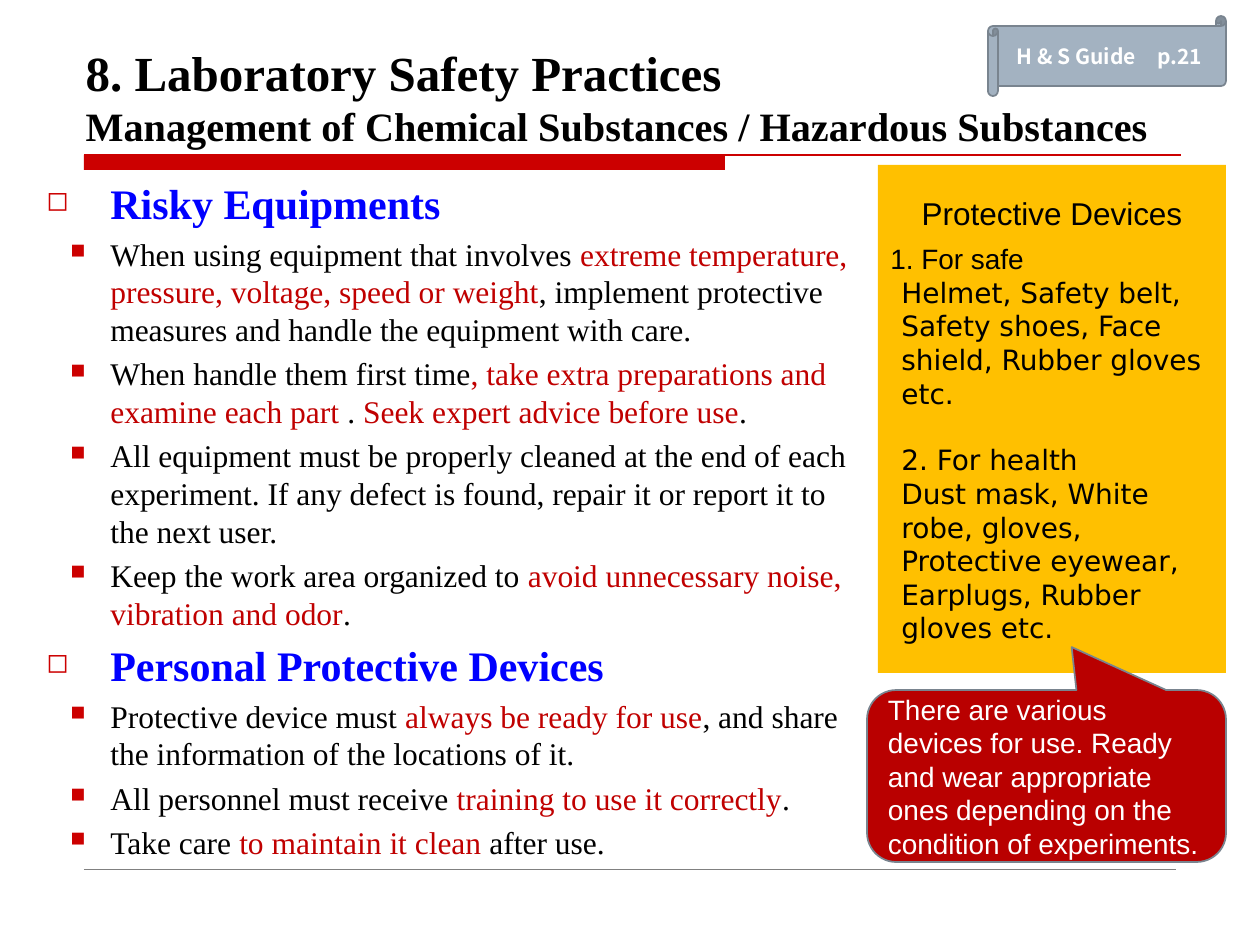
from dataclasses import dataclass

from lxml import etree
from pptx import Presentation
from pptx.dml.color import RGBColor
from pptx.enum.shapes import MSO_CONNECTOR, MSO_SHAPE
from pptx.enum.text import MSO_ANCHOR, MSO_AUTO_SIZE, PP_ALIGN
from pptx.oxml.ns import qn
from pptx.util import Emu, Pt

PX_PER_INCH = 126
LEFT, CENTER = PP_ALIGN.LEFT, PP_ALIGN.CENTER
TOP, MIDDLE, BOTTOM = MSO_ANCHOR.TOP, MSO_ANCHOR.MIDDLE, MSO_ANCHOR.BOTTOM
RECTANGLE = MSO_SHAPE.RECTANGLE
SCROLL = MSO_SHAPE.HORIZONTAL_SCROLL
CALLOUT = MSO_SHAPE.ROUNDED_RECTANGULAR_CALLOUT
STRAIGHT = MSO_CONNECTOR.STRAIGHT


@dataclass(frozen=True)
class Theme:
    serif: str = "Times New Roman"
    sans: str = "Arial"
    list_sans: str = "DejaVu Sans"
    label_font: str = "Noto Sans CJK JP"
    black: str = "000000"
    white: str = "FFFFFF"
    red: str = "CC0000"
    emphasis: str = "C00000"
    heading: str = "0000FF"
    scroll: str = "A3B2C1"
    outline: str = "79848F"
    footer: str = "808080"
    panel: str = "FFC000"
    callout: str = "B90000"
    title_size: int = 28
    subtitle_size: int = 23
    heading_size: int = 24
    body_size: int = 18
    panel_size: int = 16
    label_size: int = 12


THEME = Theme()


@dataclass(frozen=True)
class Box:
    left: int
    top: int
    width: int
    height: int

    def emu(self) -> tuple:
        return tuple(map(px, (self.left, self.top, self.width, self.height)))


@dataclass(frozen=True)
class Span:
    text: str
    emphasised: bool = False


@dataclass(frozen=True)
class Section:
    heading: str
    items: tuple


@dataclass(frozen=True)
class Bullet:
    symbol: str
    hanging: int


HEADING_BULLET = Bullet("◻", 64)
ITEM_BULLET = Bullet("■", 40)
BODY_INDENT = 64

SECTIONS = (
    Section("Risky Equipments", (
        (Span("When using equipment that involves "),
         Span("extreme temperature, pressure, voltage, speed or weight", True),
         Span(", implement protective measures and handle the equipment with care.")),
        (Span("When handle them first time"),
         Span(", take extra preparations and examine each part ", True),
         Span(". "), Span("Seek expert advice before use", True), Span(".")),
        (Span("All equipment must be properly cleaned at the end of each experiment. "
              "If any defect is found, repair it or report it to the next user."),),
        (Span("Keep the work area organized to "),
         Span("avoid unnecessary noise, vibration and odor", True), Span(".")),
    )),
    Section("Personal Protective Devices", (
        (Span("Protective device must "), Span("always be ready for use", True),
         Span(", and share the information of the locations of it.")),
        (Span("All personnel must receive "),
         Span("training to use it correctly", True), Span(".")),
        (Span("Take care "), Span("to maintain it clean ", True), Span("after use.")),
    )),
)


def px(length: int) -> Emu:
    return Emu(round(length * 914400 / PX_PER_INCH))


def add_span(para, text: str, *, size: int, font: str, color: str = THEME.black,
             bold: bool = False) -> None:
    run = para.add_run()
    run.text = text
    run.font.size = Pt(size)
    run.font.name = font
    run.font.bold = bold
    run.font.color.rgb = RGBColor.from_string(color)
    east_asian = etree.SubElement(run.font._element, qn("a:ea"))
    east_asian.set("typeface", font)


def next_para(frame, *, align=LEFT, before: float = 0, after: float = 0, indent: int = 0):
    """Return the frame's unused first paragraph, or a new one."""
    first = frame.paragraphs[0]
    para = frame.add_paragraph() if first.runs else first
    para.alignment = align
    para.space_before, para.space_after = Pt(before), Pt(after)
    if indent:
        para._p.get_or_add_pPr().set("marL", str(px(indent)))
    return para


def add_bullet(para, bullet: Bullet) -> None:
    properties = para._p.get_or_add_pPr()
    properties.set("indent", str(-px(bullet.hanging)))
    color = etree.SubElement(properties, qn("a:buClr"))
    etree.SubElement(color, qn("a:srgbClr")).set("val", THEME.red)
    etree.SubElement(properties, qn("a:buSzPct")).set("val", "65000")
    etree.SubElement(properties, qn("a:buChar")).set("char", bullet.symbol)


def set_frame(frame, anchor) -> None:
    frame.word_wrap = True
    frame.auto_size = MSO_AUTO_SIZE.NONE
    frame.vertical_anchor = anchor


def add_panel(page, preset, box: Box, fill: str, outline: str = ""):
    shape = page.shapes.add_shape(preset, *box.emu())
    shape.shadow.inherit = False
    shape.fill.solid()
    shape.fill.fore_color.rgb = RGBColor.from_string(fill)
    if outline:
        shape.line.color.rgb = RGBColor.from_string(outline)
        shape.line.width = Pt(1)
    else:
        shape.line.fill.background()
    set_frame(shape.text_frame, MIDDLE)
    return shape


def add_rule(page, left: int, right: int, y: int, color: str, width: float) -> None:
    rule = page.shapes.add_connector(STRAIGHT, px(left), px(y), px(right), px(y))
    rule.line.color.rgb = RGBColor.from_string(color)
    rule.line.width = Pt(width)
    etree.SubElement(rule._element.spPr, qn("a:effectLst"))


def write_title(page) -> None:
    title = page.shapes.title
    title.left, title.top, title.width, title.height = Box(73, 53, 1102, 103).emu()
    set_frame(title.text_frame, BOTTOM)
    para = next_para(title.text_frame)
    add_span(para, "8. Laboratory Safety Practices", size=THEME.title_size,
             font=THEME.serif, bold=True)
    para.add_line_break()
    add_span(para, "Management of Chemical Substances / Hazardous Substances",
             size=THEME.subtitle_size, font=THEME.serif, bold=True)


def write_body(page) -> None:
    frame = page.shapes.add_textbox(*Box(34, 165, 843, 716).emu()).text_frame
    set_frame(frame, TOP)
    frame.margin_top = px(13)
    for index, section in enumerate(SECTIONS):
        before = THEME.heading_size * 0.2 if index else 0
        para = next_para(frame, before=before, indent=BODY_INDENT)
        add_bullet(para, HEADING_BULLET)
        add_span(para, section.heading, size=THEME.heading_size, font=THEME.serif,
                 color=THEME.heading, bold=True)
        for spans in section.items:
            para = next_para(frame, before=THEME.body_size * 0.2, indent=BODY_INDENT)
            add_bullet(para, ITEM_BULLET)
            for span in spans:
                add_span(para, span.text, size=THEME.body_size, font=THEME.serif,
                         color=THEME.emphasis if span.emphasised else THEME.black)


def write_devices(page) -> None:
    frame = add_panel(page, RECTANGLE, Box(878, 165, 348, 508), THEME.panel).text_frame
    para = next_para(frame, align=CENTER, after=6)
    add_span(para, "Protective Devices", size=THEME.body_size, font=THEME.sans)
    add_span(next_para(frame), "1. For safe", size=THEME.panel_size, font=THEME.sans)
    for text, before in (
        ("Helmet, Safety belt, Safety shoes, Face shield, Rubber gloves etc.", 0),
        ("2. For health", 19),
        ("Dust mask, White robe, gloves, Protective eyewear, Earplugs, Rubber gloves etc.", 0),
    ):
        add_span(next_para(frame, before=before, indent=11), text,
                 size=THEME.panel_size, font=THEME.list_sans)


def main() -> None:
    deck = Presentation()
    deck.slide_width, deck.slide_height = px(1260), px(945)
    page = deck.slides.add_slide(deck.slide_layouts[5])
    add_panel(page, RECTANGLE, Box(84, 155, 641, 15), THEME.red)
    add_rule(page, 84, 1181, 155, THEME.red, 0.75)
    add_rule(page, 84, 1176, 869, THEME.footer, 0.25)
    write_body(page)
    write_title(page)
    scroll = add_panel(page, SCROLL, Box(988, 16, 238, 80), THEME.scroll, THEME.outline)
    add_span(next_para(scroll.text_frame, align=CENTER), "H & S Guide　p.21",
             size=THEME.label_size, font=THEME.label_font, color=THEME.white, bold=True)
    write_devices(page)
    callout = add_panel(page, CALLOUT, Box(867, 690, 359, 172), THEME.callout, THEME.outline)
    for index, value in enumerate((0.07, -0.75, 0.17)):
        callout.adjustments[index] = value
    add_span(next_para(callout.text_frame),
             "There are various devices for use. Ready and wear appropriate ones "
             "depending on the condition of experiments.",
             size=THEME.panel_size, font=THEME.sans, color=THEME.white)
    deck.save("out.pptx")


if __name__ == "__main__":
    main()
